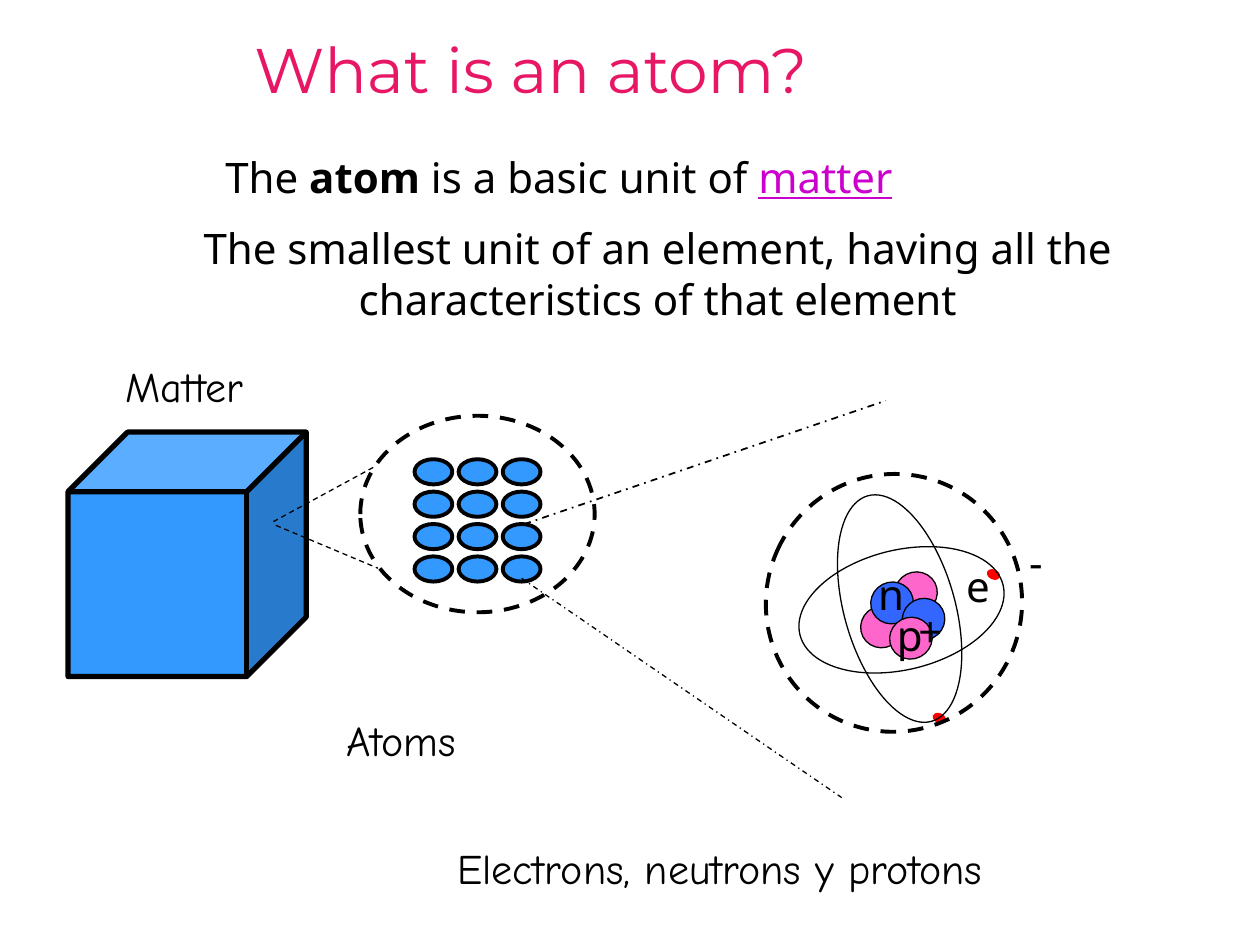
"""Build a slide that zooms from matter to atoms to electrons, neutrons and protons."""
from dataclasses import dataclass

from lxml.etree import SubElement
from pptx import Presentation
from pptx.dml.color import RGBColor
from pptx.enum.dml import MSO_LINE_DASH_STYLE as Dash
from pptx.enum.shapes import MSO_CONNECTOR as Connector, MSO_SHAPE as Shape
from pptx.enum.text import MSO_AUTO_SIZE as AutoSize, PP_ALIGN as Align
from pptx.oxml.ns import qn
from pptx.util import Inches, Pt


@dataclass(frozen=True)
class Theme:
    ink: str = "000000"
    title: str = "E81766"
    link: str = "CC00CC"
    matter: str = "3399FF"
    proton: str = "FF66CC"
    neutron: str = "3366FF"
    electron: str = "FF0000"
    title_font: str = "Montserrat"
    body_font: str = "Noto Sans"
    label_font: str = "Comic Neue"
    title_size: int = 36
    body_size: int = 24
    thin: float = 0.75
    medium: float = 2.25
    thick: float = 3


theme = Theme()
presentation = Presentation()
presentation.slide_width, presentation.slide_height = Inches(10), Inches(7.5)
COLUMN = presentation.slide_width / 100
ROW = presentation.slide_height / 75
slide = presentation.slides.add_slide(presentation.slide_layouts[6])


def add_figure(shapes, kind, box, fill=None, line=None, dash=None, rotation=0):
    left, top, width, height = box
    shape = shapes.add_shape(kind, int(left * COLUMN), int(top * ROW),
                             int(width * COLUMN), int(height * ROW))
    shape.shadow.inherit = False
    shape.rotation = rotation
    if fill:
        shape.fill.solid()
        shape.fill.fore_color.rgb = RGBColor.from_string(fill)
    else:
        shape.fill.background()
    if line:
        shape.line.color.rgb = RGBColor.from_string(theme.ink)
        shape.line.width = Pt(line)
        shape.line.dash_style = dash
    else:
        shape.line.fill.background()


def add_label(shapes, box, text, font=theme.body_font, size=theme.body_size,
              color=theme.ink, align=Align.LEFT):
    left, top, width, height = box
    label = shapes.add_textbox(int(left * COLUMN), int(top * ROW),
                               int(width * COLUMN), int(height * ROW))
    label.text_frame.word_wrap = True
    label.text_frame.auto_size = AutoSize.SHAPE_TO_FIT_TEXT
    label.text_frame.text = text
    paragraph = label.text_frame.paragraphs[0]
    paragraph.alignment = align
    paragraph.font.name = font
    paragraph.font.size = Pt(size)
    paragraph.font.color.rgb = RGBColor.from_string(color)
    for run in paragraph.runs:
        run.font.name = font
        run.font.size = Pt(size)
        run.font.color.rgb = RGBColor.from_string(color)
    return paragraph


add_figure(slide.shapes, Shape.CUBE, (5.4, 34.3, 18.9, 19.4), theme.matter, theme.thick)

for box, text in [
    ((9, 28.1, 13.3, 5), "Matter"),
    ((26.5, 56.2, 13.7, 5), "Atoms"),
    ((35.3, 66.4, 59.8, 5), "Electrons, neutrons y protons"),
]:
    add_label(slide.shapes, box, text, theme.label_font)

add_label(slide.shapes, (19.2, 1.9, 56.8, 7.1), "What is an atom?",
          theme.title_font, theme.title_size, theme.title)
definition = add_label(slide.shapes, (16.9, 11.5, 74, 5), "The ")
for text, bold, underline, color in [
    ("atom", True, False, theme.ink),
    (" is a basic unit of ", False, False, theme.ink),
    ("matter", False, True, theme.link),
]:
    run = definition.add_run()
    run.text = text
    run.font.name = theme.body_font
    run.font.size = Pt(theme.body_size)
    run.font.bold = bold
    run.font.underline = underline
    run.font.color.rgb = RGBColor.from_string(color)
add_label(slide.shapes, (4.4, 17.2, 95.6, 9.1),
          "The smallest unit of an element, having all the characteristics of that element",
          align=Align.CENTER)

sample = slide.shapes.add_group_shape().shapes
add_figure(sample, Shape.OVAL, (28.6, 33, 18.6, 15.6), line=theme.medium, dash=Dash.DASH)
for row in range(4):
    for column in range(3):
        add_figure(sample, Shape.OVAL, (32.9 + 3.5 * column, 36.45 + 2.57 * row, 3, 2),
                   theme.matter, theme.medium)

atom = slide.shapes.add_group_shape().shapes
for left, top in [(78.3, 45.2), (74, 56.6)]:
    add_figure(atom, Shape.OVAL, (left, top, 1.1, 0.8), theme.electron, rotation=24.3)
for box, rotation in [((67, 39, 8.8, 18.6), 344.2), ((66.8, 40.1, 9.5, 16.6), 256.3)]:
    add_figure(atom, Shape.OVAL, box, line=theme.thin, rotation=rotation)
add_figure(atom, Shape.OVAL, (60.8, 37.6, 20.3, 20.5), line=theme.medium,
           dash=Dash.DASH, rotation=24.3)
for left, top, color in [
    (68.3, 48.1, theme.proton),
    (71, 45.4, theme.proton),
    (69.1, 46.2, theme.neutron),
    (71.6, 47.5, theme.neutron),
    (70.6, 49, theme.proton),
]:
    add_figure(atom, Shape.OVAL, (left, top, 3.4, 3.3), color, theme.thin, rotation=332.6)
for shapes, left, top, width, text in [
    (atom, 75.7, 44, 3.3, "e"),
    (atom, 68.7, 44.6, 6.5, "n"),
    (atom, 70.2, 47.9, 3.6, "p"),
    (slide.shapes, 71.9, 47.6, 2.5, "+"),
    (slide.shapes, 80.7, 42.1, 4.6, "-"),
]:
    add_label(shapes, (left, top, width, 5), text)

for shapes, start, end, width, dash in [
    (sample, (21.7, 41.4), (29.8, 37), theme.thin, Dash.DASH),
    (sample, (21.9, 41.7), (30, 45.1), theme.thin, Dash.DASH),
    (slide.shapes, (41.4, 45.9), (66.8, 63.3), theme.thin, Dash.DASH_DOT),
    (slide.shapes, (41.6, 41.6), (70.3, 31.8), 1, Dash.DASH_DOT),
]:
    ray = shapes.add_connector(Connector.STRAIGHT,
                               int(start[0] * COLUMN), int(start[1] * ROW),
                               int(end[0] * COLUMN), int(end[1] * ROW))
    ray.line.color.rgb = RGBColor.from_string(theme.ink)
    ray.line.width = Pt(width)
    ray.line.dash_style = dash
    SubElement(ray._element.spPr, qn("a:effectLst"))

presentation.save("out.pptx")
